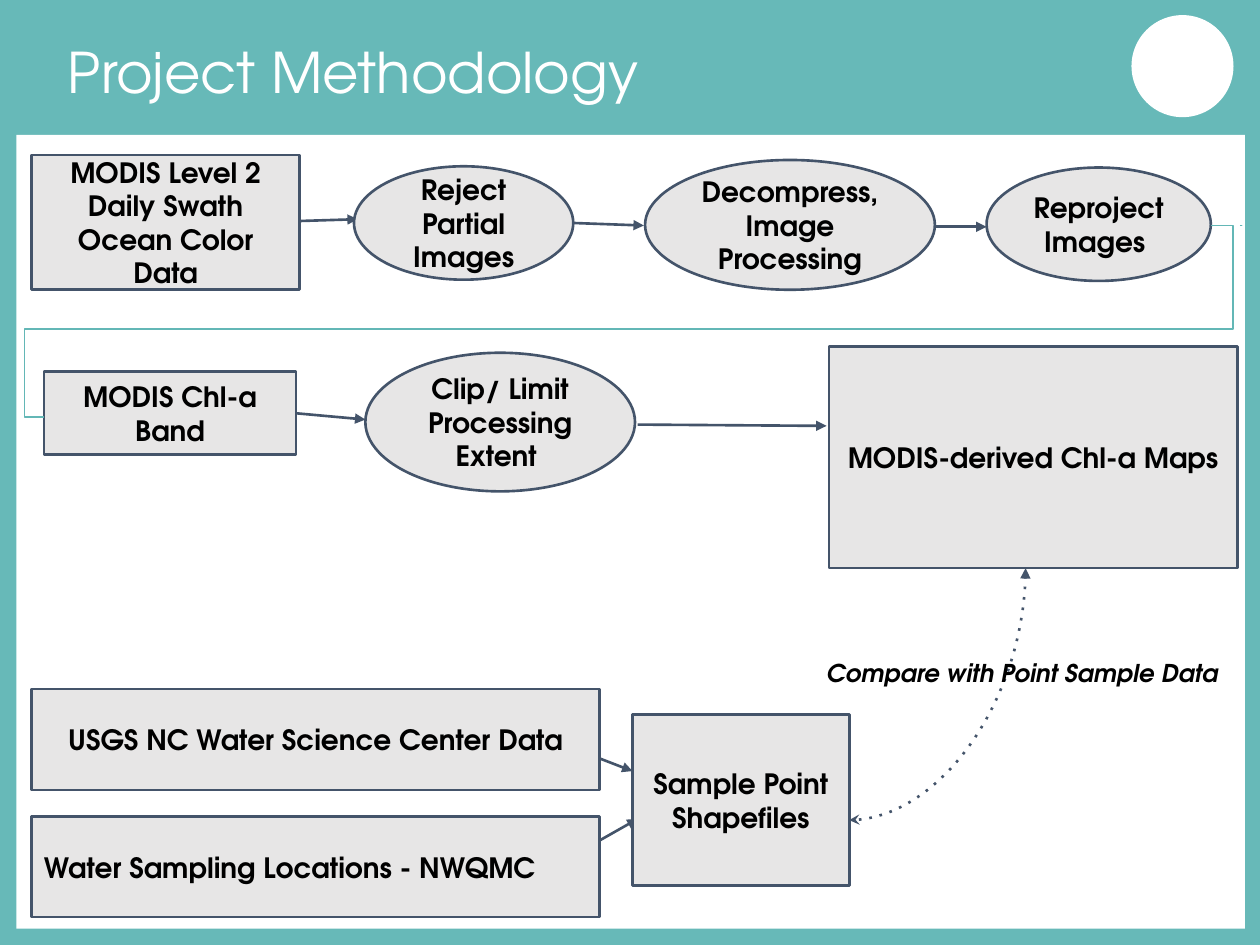
"""Builds the Project Methodology flowchart slide on a grid of 100 by 75 cells."""
import pptx
import pptx.util
import pptx.dml.color
import pptx.enum.shapes
import pptx.enum.text
import pptx.oxml.ns
import lxml.etree

COLORS = {"teal": "67B9B8", "route": "63B7B6", "navy": "44546A",
          "panel": "E7E6E6", "white": "FFFFFF", "black": "000000"}
RGB = {name: pptx.dml.color.RGBColor.from_string(code) for name, code in COLORS.items()}
FONT = "TeX Gyre Adventor"
SHAPE = pptx.enum.shapes.MSO_SHAPE
LINK = pptx.enum.shapes.MSO_CONNECTOR
ANCHOR = pptx.enum.text.MSO_ANCHOR
ALIGN = pptx.enum.text.PP_ALIGN
CELL = pptx.util.Inches(0.1)
qn = pptx.oxml.ns.qn

deck = pptx.Presentation()
deck.slide_width, deck.slide_height = 100 * CELL, 75 * CELL
slide = deck.slides.add_slide(deck.slide_layouts[6])


def write(holder, wording, size, color, align, anchor, inset=1, bold=True, italic=False):
    frame = holder.text_frame
    frame.word_wrap = True
    frame.vertical_anchor = anchor
    frame.margin_left = frame.margin_right = CELL
    frame.margin_top = frame.margin_bottom = int(inset * CELL)
    frame.paragraphs[0].alignment = align
    run = frame.paragraphs[0].add_run()
    run.text = wording
    run.font.name, run.font.size = FONT, pptx.util.Pt(size)
    run.font.bold, run.font.italic = bold, italic
    run.font.color.rgb = RGB[color]


def link(route, kind=LINK.STRAIGHT, color="navy", width=1.5, head=None, tail="triangle",
         dash=None, preset=None, bends=()):
    connector = slide.shapes.add_connector(kind, *[int(n * CELL) for n in route])
    connector.line.color.rgb = RGB[color]
    connector.line.width = pptx.util.Pt(width)
    outline = connector.line._get_or_add_ln()
    for tag, key, value in (("a:prstDash", "val", dash), ("a:headEnd", "type", head),
                            ("a:tailEnd", "type", tail)):
        if value:
            lxml.etree.SubElement(outline, qn(tag)).set(key, value)
    properties = connector._element.spPr
    lxml.etree.SubElement(properties, qn("a:effectLst"))
    if preset:
        geometry = properties.find(qn("a:prstGeom"))
        geometry.set("prst", preset)
        adjustments = geometry.find(qn("a:avLst"))
        for number, share in enumerate(bends, 1):
            guide = lxml.etree.SubElement(adjustments, qn("a:gd"))
            guide.set("name", f"adj{number}" if len(bends) > 1 else "adj1")
            guide.set("fmla", f"val {round(share * 100000)}")
    return connector


for form, area, color in (
    (SHAPE.RECTANGLE, (0, 0, 100, 75), "teal"),
    (SHAPE.RECTANGLE, (1.3, 10.7, 97.5, 63), "white"),
    (SHAPE.OVAL, (89.8, 1.2, 8.1, 8.1), "white"),
):
    backdrop = slide.shapes.add_shape(form, *[int(n * CELL) for n in area])
    backdrop.shadow.inherit = False
    backdrop.fill.solid()
    backdrop.fill.fore_color.rgb = RGB[color]
    backdrop.line.fill.background()

for route in ((47.6, 60.2, 50.2, 61.2), (47.6, 66.7, 50.6, 65), (50.6, 33.7, 65.6, 33.8),
              (21.9, 17.6, 28.4, 17.4), (72.8, 18, 78.3, 18)):
    link(route)

title = slide.shapes.add_textbox(*[int(n * CELL) for n in (4.4, 1.7, 78.1, 7.2)])
write(title, "Project Methodology", 32, "white", ALIGN.LEFT, ANCHOR.BOTTOM, inset=0.5, bold=False)
title.text_frame.paragraphs[0].line_spacing = 0.9

DATA, STEP = SHAPE.RECTANGLE, SHAPE.FLOWCHART_CONNECTOR
stages = {}
for wording, form, area, align in (
    ("MODIS Level 2 Daily Swath Ocean Color Data", DATA, (2.5, 12.3, 21.3, 10.7), ALIGN.CENTER),
    ("Reject Partial Images", STEP, (28.1, 13.2, 17.4, 9), ALIGN.CENTER),
    ("Decompress, Image Processing", STEP, (51.2, 12.7, 23, 10.3), ALIGN.CENTER),
    ("Reproject Images ", STEP, (78.3, 13.3, 17.8, 9), ALIGN.CENTER),
    ("MODIS Chl-a Band", DATA, (3.5, 29.5, 20, 6.6), ALIGN.CENTER),
    ("MODIS-derived Chl-a Maps", DATA, (65.8, 27.5, 32.4, 17.6), ALIGN.CENTER),
    ("Clip/ Limit Processing Extent ", STEP, (29, 28, 21.4, 11), ALIGN.CENTER),
    ("USGS NC Water Science Center Data", DATA, (2.5, 54.7, 45.1, 8), ALIGN.CENTER),
    ("Water Sampling Locations - NWQMC", DATA, (2.5, 64.8, 45.1, 8), ALIGN.LEFT),
    ("Sample Point Shapefiles", DATA, (50.2, 56.7, 17.2, 13.6), ALIGN.CENTER),
):
    stage = slide.shapes.add_shape(form, *[int(n * CELL) for n in area])
    stage.shadow.inherit = False
    stage.fill.solid()
    stage.fill.fore_color.rgb = RGB["panel"]
    stage.line.color.rgb = RGB["navy"]
    stage.line.width = pptx.util.Pt(1.5)
    write(stage, wording, 16, "black", align, ANCHOR.MIDDLE)
    stages[wording] = stage

link((45.5, 17.7, 51.1, 17.9))
link((98.4, 17.9, 98.5, 17.9), LINK.ELBOW, "route", 0.75, tail=None,
     preset="bentConnector3", bends=(1.5,))
link((3.5, 33.1, 96.1, 17.9), LINK.ELBOW, "route", 0.75, tail=None,
     preset="bentConnector5", bends=(-0.017, 0.46, 1.019))
link((67.4, 65.1, 81.4, 45.1), LINK.CURVE, head="stealth", dash="dot", preset="curvedConnector2")

comparison = slide.shapes.add_textbox(*[int(n * CELL) for n in (64.6, 51.2, 35.9, 3.5)])
write(comparison, "Compare with Point Sample Data", 14, "black", ALIGN.LEFT, ANCHOR.TOP, italic=True)

band_to_clip = link((23.5, 32.8, 29, 33.3))
band_to_clip.begin_connect(stages["MODIS Chl-a Band"], 3)

deck.save("out.pptx")
